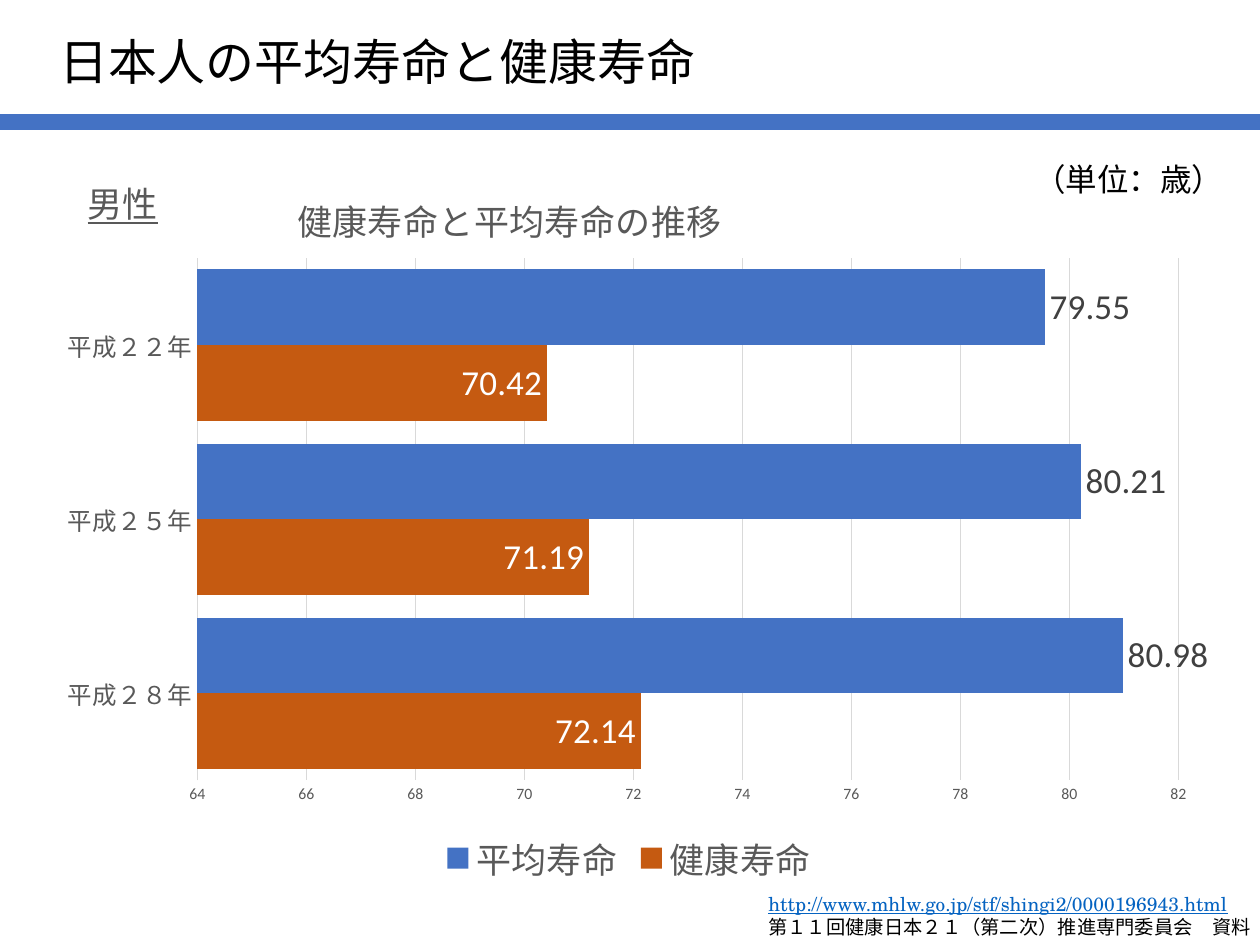
from pptx import Presentation
from pptx.chart.data import CategoryChartData
from pptx.dml.color import RGBColor
from pptx.enum.chart import (XL_CHART_TYPE, XL_LABEL_POSITION,
                             XL_LEGEND_POSITION, XL_TICK_MARK)
from pptx.enum.shapes import MSO_CONNECTOR
from pptx.enum.text import MSO_ANCHOR, PP_ALIGN
from pptx.oxml import parse_xml
from pptx.oxml.ns import nsdecls, qn
from pptx.util import Pt

BAR = XL_CHART_TYPE.BAR_CLUSTERED
IN_END = XL_LABEL_POSITION.INSIDE_END
OUT_END = XL_LABEL_POSITION.OUTSIDE_END
BOTTOM = XL_LEGEND_POSITION.BOTTOM
NO_TICK = XL_TICK_MARK.NONE
LINE = MSO_CONNECTOR.STRAIGHT
TOP = MSO_ANCHOR.TOP
LEFT, JUST = PP_ALIGN.LEFT, PP_ALIGN.JUSTIFY

BLUE, RUST = "4472C4", "C55A11"
GREY, PALE, DARK = "595959", "D9D9D9", "404040"


def rgb(code):
    return RGBColor.from_string(code)


def set_font(font, size, color="000000", name="Calibri", under=None):
    font.size, font.name = Pt(size), name
    font.color.rgb = rgb(color)
    font.bold = False
    if under:
        font.underline = True


def put_text(par, text, align=None, **style):
    par.alignment = align
    run = par.add_run()
    run.text = text
    set_font(run.font, **style)


def set_place(node, after, inner=False, **parts):
    """Give a chart part a manual layout, as shares of the chart."""
    for old in node.findall(qn("c:layout")):
        node.remove(old)
    tags = '<c:layoutTarget val="inner"/>' if inner else ""
    tags += '<c:xMode val="edge"/><c:yMode val="edge"/>'
    tags += "".join(f'<c:{k} val="{v}"/>' for k, v in parts.items())
    lay = parse_xml(f'<c:layout {nsdecls("c")}><c:manualLayout>{tags}'
                    '</c:manualLayout></c:layout>')
    if after is None:
        node.insert(0, lay)
    else:
        after.addnext(lay)


class Page:
    def __init__(self, deck):
        self.slide = deck.slides.add_slide(deck.slide_layouts[5])
        self.shapes = self.slide.shapes

    def title(self, text, left, top, width, height, **style):
        box = self.shapes.title
        box.left, box.top = Pt(left), Pt(top)
        box.width, box.height = Pt(width), Pt(height)
        frame = box.text_frame
        frame.vertical_anchor = TOP
        put_text(frame.paragraphs[0], text, LEFT, **style)

    def text(self, lines, left, top, width, height, align=None):
        box = self.shapes.add_textbox(Pt(left), Pt(top), Pt(width), Pt(height))
        frame = box.text_frame
        frame.word_wrap = True
        for i, (text, style) in enumerate(lines):
            par = frame.add_paragraph() if i else frame.paragraphs[0]
            put_text(par, text, align, **style)

    def rule(self, left, right, y, color, width):
        line = self.shapes.add_connector(LINE, Pt(left), Pt(y), Pt(right), Pt(y))
        line.line.color.rgb = rgb(color)
        line.line.width = Pt(width)
        line.element.spPr.append(parse_xml(f'<a:effectLst {nsdecls("a")}/>'))

    def chart(self, head, cats, rows, left, top, width, height):
        data = CategoryChartData(number_format="0.00")
        data.categories = cats
        for name, vals, *_ in rows:
            data.add_series(name, vals)
        chart = self.shapes.add_chart(BAR, Pt(left), Pt(top), Pt(width),
                                      Pt(height), data).chart
        set_font(chart.font, 10)

        # Heading and plot area
        title = chart.chart_title
        put_text(title.text_frame.paragraphs[0], head, size=20, color=GREY)
        title.include_in_layout = False
        node = chart.element.xpath("c:chart/c:title")[0]
        set_place(node, node.find(qn("c:tx")), x=0.21, y=0.04)
        area = chart.element.xpath("c:chart/c:plotArea")[0]
        set_place(area, None, inner=True, x=0.13, y=0.14, w=0.84, h=0.71)

        # Bars and their labels
        plot = chart.plots[0]
        plot.gap_width, plot.overlap = 30, 0
        plot.vary_by_categories = False
        for bar, (_, _, fill, ink, spot) in zip(plot.series, rows):
            bar.format.fill.solid()
            bar.format.fill.fore_color.rgb = rgb(fill)
            tags = bar.data_labels
            tags.show_value = True
            tags.position = spot
            set_font(tags.font, 20, ink)

        # Axes
        cat, val = chart.category_axis, chart.value_axis
        for axis, size in ((cat, 14), (val, 9)):
            axis.major_tick_mark = axis.minor_tick_mark = NO_TICK
            set_font(axis.tick_labels.font, size, GREY)
        val.minimum_scale, val.maximum_scale, val.major_unit = 64, 82, 2
        val.tick_labels.number_format = "0"
        val.tick_labels.number_format_is_linked = False
        val.format.line.fill.background()
        for line in (cat.format.line, val.major_gridlines.format.line):
            line.color.rgb = rgb(PALE)
            line.width = Pt(0.75)

        # Legend
        chart.has_legend = True
        chart.legend.position = BOTTOM
        chart.legend.include_in_layout = False
        set_font(chart.legend.font, 20, GREY)


def main():
    deck = Presentation()
    deck.slide_width, deck.slide_height = Pt(720), Pt(540)
    page = Page(deck)

    # Header
    page.title("日本人の平均寿命と健康寿命", 26.6, 14.4, 398, 41, size=28)
    page.rule(0, 720, 69.8, BLUE, 9)

    # Life spans by year
    page.chart("健康寿命と平均寿命の推移",
               ["平成２８年", "平成２５年", "平成２２年"],
               [("健康寿命", (72.14, 71.19, 70.42), RUST, "FFFFFF", IN_END),
                ("平均寿命", (80.98, 80.21, 79.55), BLUE, DARK, OUT_END)],
               26, 88.6, 667.4, 420.5)
    page.text([("男性", dict(size=20, color=GREY, under=True))],
              43, 101, 70, 36)
    page.text([("（単位：歳）", dict(size=18))], 584, 87.8, 124.6, 29)

    # Source
    serif = dict(size=11, name="TeX Gyre Schola")
    page.text([("http://www.mhlw.go.jp/stf/shingi2/0000196943.html",
                dict(serif, color="0563C1", under=True)),
               ("第１１回健康日本２１（第二次）推進専門委員会　資料", serif)],
              432, 506.2, 298, 33.8, JUST)

    deck.save("out.pptx")


if __name__ == "__main__":
    main()
